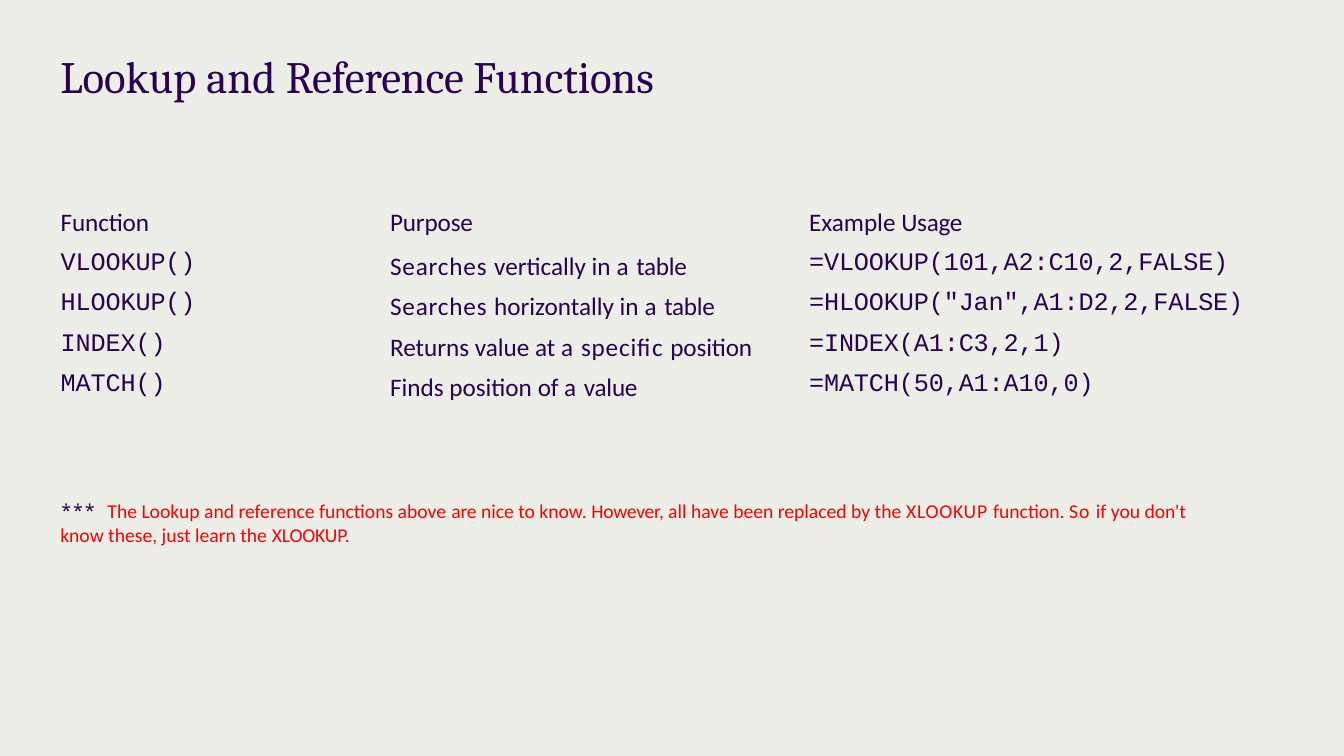
from typing import NamedTuple

import pptx
import pptx.dml.color
import pptx.enum.text
import pptx.util

Cm = pptx.util.Cm
Pt = pptx.util.Pt
RGBColor = pptx.dml.color.RGBColor

PAPER = RGBColor(0xED, 0xEE, 0xE7)
PURPLE = RGBColor(0x2A, 0x00, 0x52)
RED = RGBColor(0xFF, 0x00, 0x00)
NO_STYLE_NO_GRID = "{2D5ABB26-0587-4C30-8999-92F81FD0307C}"


class Span(NamedTuple):
    text: str
    spacing: float = 0  # points between letters


class Column(NamedTuple):
    width: float
    indent: float
    font: str
    top: float


class Function(NamedTuple):
    name: str
    purpose: list[Span]
    example: str


COLUMNS = [
    Column(5.94, 0.08, "Courier New", 0.11),
    Column(12.34, 2.44, "Calibri", 0.16),
    Column(11.76, 0.66, "Courier New", 0.11),
]
ROW_HEIGHTS = [0.89, 1.02, 1.02, 1.02, 0.89]
HEADER = [
    [Span("Function", -0.1)],
    [Span("Purpose", -0.1)],
    [Span("Example "), Span("Usage", -0.2)],
]
FUNCTIONS = [
    Function("VLOOKUP()",
             [Span("Searches ", 0.6), Span("vertically in "), Span("a ", 0.7), Span("table", -0.2)],
             "=VLOOKUP(101,A2:C10,2,FALSE)"),
    Function("HLOOKUP()",
             [Span("Searches ", 0.6), Span("horizontally in "), Span("a ", 0.7), Span("table", -0.2)],
             '=HLOOKUP("Jan",A1:D2,2,FALSE)'),
    Function("INDEX()",
             [Span("Returns value at "), Span("a ", 0.7), Span("specific ", 0.6),
              Span("position", -0.1)],
             "=INDEX(A1:C3,2,1)"),
    Function("MATCH()",
             [Span("Finds position "), Span("of ", -0.1), Span("a ", 0.7), Span("value", -0.2)],
             "=MATCH(50,A1:A10,0)"),
]
TITLE = [Span("Lookup and "), Span("Reference ", -0.2), Span("Functions", -0.1)]
NOTE = [
    Span("The Lookup and reference functions above "), Span("are ", -0.1),
    Span("nice to know. "), Span("However, ", -0.2),
    Span("all have been replaced by the "), Span("XLOOKUP ", 0.5),
    Span("function. "), Span("So ", 0.7), Span("if you "), Span("don't ", -0.1),
    Span("know these, just learn the "), Span("XLOOKUP.", -0.1),
]


def style_font(font, name: str, size: float, color: RGBColor) -> None:
    font.name = name
    font.size = Pt(size)
    font.color.rgb = color


def add_spans(p, spans: list[Span]) -> list:
    """Add one run per span, with its letter spacing, and return the runs."""
    runs = []
    for span in spans:
        r = p.add_run()
        r.text = span.text
        if span.spacing:
            r.font._element.set("spc", str(round(span.spacing * 100)))
        runs.append(r)
    return runs


def add_text_box(slide, left: float, top: float, width: float, height: float, inset: float):
    """Add a wrapping text box and return its first paragraph."""
    tf = slide.shapes.add_textbox(Cm(left), Cm(top), Cm(width), Cm(height)).text_frame
    tf.word_wrap = True
    tf.auto_size = pptx.enum.text.MSO_AUTO_SIZE.SHAPE_TO_FIT_TEXT
    tf.margin_left = tf.margin_right = tf.margin_bottom = 0
    tf.margin_top = Cm(inset)
    return tf.paragraphs[0]


def fill_cell(cell, spans: list[Span], column: Column, is_header: bool) -> None:
    cell.fill.background()
    cell.margin_left = Cm(column.indent)
    cell.margin_right = cell.margin_bottom = 0
    cell.margin_top = 0 if is_header else Cm(column.top)
    p = cell.text_frame.paragraphs[0]
    add_spans(p, spans)
    style_font(p.font, "Calibri" if is_header else column.font, 18, PURPLE)
    if is_header:
        p.line_spacing = Pt(20.5)


def add_function_table(slide) -> None:
    rows = [HEADER] + [
        [[Span(f.name, -0.1)], f.purpose, [Span(f.example, -0.1)]] for f in FUNCTIONS
    ]
    width = sum(column.width for column in COLUMNS)
    table = slide.shapes.add_table(
        len(rows), len(COLUMNS), Cm(1.45), Cm(5.28), Cm(width), Cm(sum(ROW_HEIGHTS))
    ).table
    table.first_row = table.horz_banding = False
    table._tbl.tblPr[0].text = NO_STYLE_NO_GRID
    for i, column in enumerate(COLUMNS):
        table.columns[i].width = Cm(column.width)
    for i, (row, height) in enumerate(zip(rows, ROW_HEIGHTS)):
        table.rows[i].height = Cm(height)
        for j, (spans, column) in enumerate(zip(row, COLUMNS)):
            fill_cell(table.cell(i, j), spans, column, is_header=i == 0)


def main() -> None:
    prs = pptx.Presentation()
    prs.slide_width = Cm(33.87)
    prs.slide_height = Cm(19.05)
    slide = prs.slides.add_slide(prs.slide_layouts[6])
    slide.background.fill.solid()
    slide.background.fill.fore_color.rgb = PAPER

    title = add_text_box(slide, 1.52, 1.14, 15.7, 1.45, 0.1)
    add_spans(title, TITLE)
    style_font(title.font, "Cambria", 32, PURPLE)

    add_function_table(slide)

    note = add_text_box(slide, 1.52, 12.5, 28.75, 1.3, 0.06)
    note.line_spacing = 1.03
    for r in add_spans(note, [Span("*** ")]):
        style_font(r.font, "Noto Sans Mono", 14, PURPLE)
    for r in add_spans(note, NOTE):
        style_font(r.font, "Calibri", 14, RED)

    prs.save("out.pptx")


if __name__ == "__main__":
    main()
